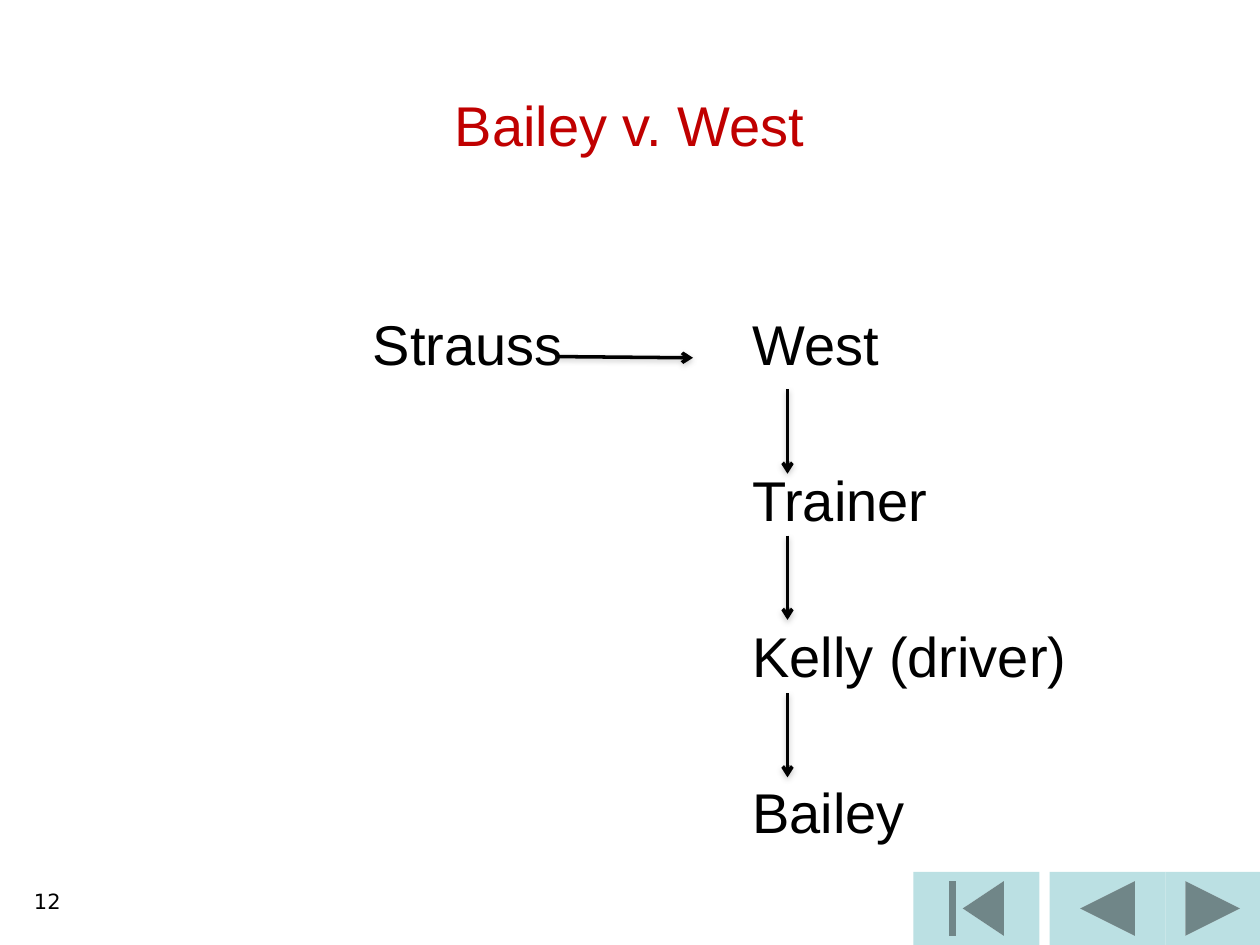
from lxml import etree
from pptx import Presentation
from pptx.dml.color import RGBColor
from pptx.enum import shapes, text
from pptx.oxml import parse_xml
from pptx.util import Inches, Pt

# Content
TITLE = "Bailey v. West"
PAGE_NUMBER = "12"
SENDER = "Strauss"
CHAIN = ["West", "Trainer", "Kelly (driver)", "Bailey"]
BUTTONS = [  # kind, left, width
    (shapes.MSO_SHAPE.ACTION_BUTTON_BACK_OR_PREVIOUS, 8.33, 0.92),
    (shapes.MSO_SHAPE.ACTION_BUTTON_BEGINNING, 7.25, 1),
    (shapes.MSO_SHAPE.ACTION_BUTTON_FORWARD_OR_NEXT, 9.25, 0.75),
]

# Layout, in inches
SENDER_LEFT, CHAIN_LEFT = 2.96, 5.97
FIRST_ROW, ROW_STEP, ROW_HEIGHT = 2.42, 1.24, 0.6
BUTTON_TOP, BUTTON_HEIGHT = 6.92, 0.58
DOWN_X, DOWN_STARTS, DOWN_LENGTH = 6.25, (3.09, 4.25, 5.5), 0.67
ARROWS = [((4.42, 2.83), (5.5, 2.84))] + [
    ((DOWN_X, start), (DOWN_X, start + DOWN_LENGTH)) for start in DOWN_STARTS
]

THEME = {
    "title": {"name": "Arial", "size": Pt(32), "color": "C00000"},
    "body": {"name": "Arial", "size": Pt(32), "color": "000000"},
    "number": {"name": "DejaVu Sans", "size": Pt(12), "color": "000000"},
    "button": "BBE0E3",
    "arrow": "000000",
    "arrow_width": Pt(2),
}
NAMESPACE = "http://schemas.openxmlformats.org/drawingml/2006/main"
ARROW_SHADOW = (
    f'<a:effectLst xmlns:a="{NAMESPACE}">'
    '<a:outerShdw blurRad="39370" dist="20320" dir="5400000" rotWithShape="0">'
    '<a:srgbClr val="808080"><a:alpha val="38000"/></a:srgbClr>'
    "</a:outerShdw></a:effectLst>"
)


def write(shape, words, style, align, anchor=text.MSO_ANCHOR.MIDDLE, inset=0):
    frame = shape.text_frame
    settings = {
        "word_wrap": True, "auto_size": text.MSO_AUTO_SIZE.NONE,
        "vertical_anchor": anchor, "margin_left": inset, "margin_right": inset,
        "margin_top": 0, "margin_bottom": 0,
    }
    for name, value in settings.items():
        setattr(frame, name, value)
    paragraph = frame.paragraphs[0]
    paragraph.alignment = align
    run = paragraph.add_run()
    run.text = words
    for name in ("name", "size"):
        setattr(run.font, name, THEME[style][name])
    run.font.color.rgb = RGBColor.from_string(THEME[style]["color"])


def add_label(slide, words, left, top, width):
    box = slide.shapes.add_textbox(*map(Inches, (left, top, width, ROW_HEIGHT)))
    write(box, words, "body", text.PP_ALIGN.LEFT)


def add_arrow(slide, start, end):
    arrow = slide.shapes.add_connector(
        shapes.MSO_CONNECTOR.STRAIGHT, *map(Inches, start + end))
    arrow.line.color.rgb = RGBColor.from_string(THEME["arrow"])
    arrow.line.width = THEME["arrow_width"]
    line = arrow.line._get_or_add_ln()
    etree.SubElement(line, f"{{{NAMESPACE}}}tailEnd", type="arrow")
    arrow._element.spPr.append(parse_xml(ARROW_SHADOW))


def main():
    presentation = Presentation()
    presentation.slide_width, presentation.slide_height = Inches(10), Inches(7.5)
    slide = presentation.slides.add_slide(presentation.slide_layouts[5])

    # Navigation buttons
    for kind, left, width in BUTTONS:
        button = slide.shapes.add_shape(
            kind, *map(Inches, (left, BUTTON_TOP, width, BUTTON_HEIGHT)))
        button.shadow.inherit = False
        button.fill.solid()
        button.fill.fore_color.rgb = RGBColor.from_string(THEME["button"])
        button.line.fill.background()

    # Title
    title = slide.shapes.title
    place = {"left": 0.23, "top": 0.32, "width": 9.54, "height": 1.33}
    for name, value in place.items():
        setattr(title, name, Inches(value))
    write(title, TITLE, "title", text.PP_ALIGN.CENTER)

    # Names
    add_label(slide, SENDER, SENDER_LEFT, FIRST_ROW, 1.8)
    for row, name in enumerate(CHAIN):
        add_label(slide, name, CHAIN_LEFT, FIRST_ROW + row * ROW_STEP, 3.5)

    # Page number
    number = slide.shapes.add_textbox(*map(Inches, (0, 7, 0.58, 0.5)))
    write(number, PAGE_NUMBER, "number", text.PP_ALIGN.RIGHT,
          text.MSO_ANCHOR.TOP, Inches(0.1))
    number.text_frame.margin_top = Inches(0.05)

    # Arrows between the names
    for start, end in ARROWS:
        add_arrow(slide, start, end)

    presentation.save("out.pptx")


if __name__ == "__main__":
    main()
